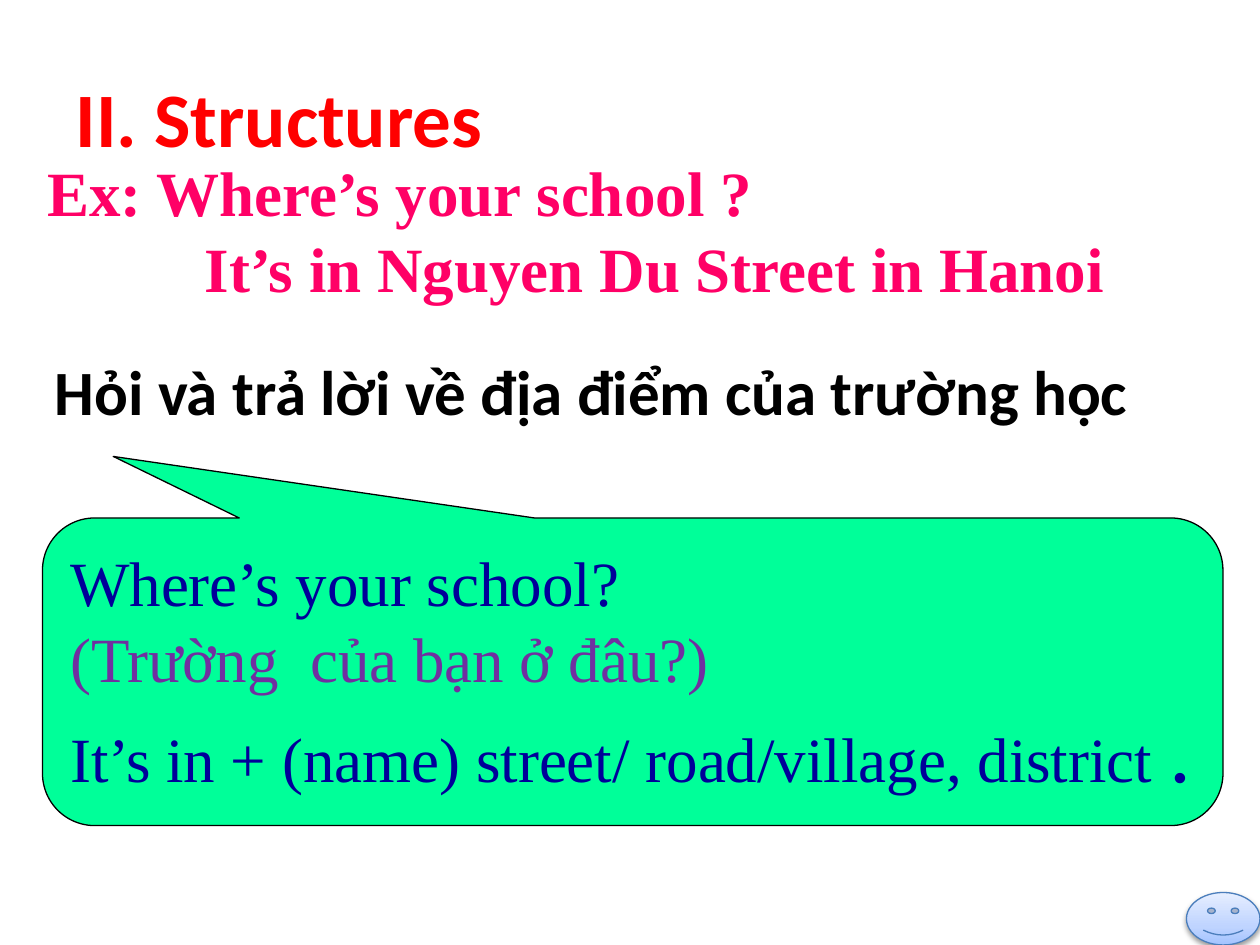
import pptx
import pptx.util
import pptx.dml.color
import pptx.enum.shapes
import pptx.enum.text
import pptx.oxml
import pptx.oxml.ns

Pt = pptx.util.Pt
RGBColor = pptx.dml.color.RGBColor
SHAPES = pptx.enum.shapes.MSO_SHAPE
LEFT = pptx.enum.text.PP_ALIGN.LEFT
MIDDLE = pptx.enum.text.MSO_ANCHOR.MIDDLE

RED = RGBColor(0xFF, 0x00, 0x00)
PINK = RGBColor(0xFF, 0x00, 0x66)
BLACK = RGBColor(0x00, 0x00, 0x00)
NAVY = RGBColor(0x00, 0x00, 0x99)
PURPLE = RGBColor(0x70, 0x30, 0xA0)
MINT = RGBColor(0x00, 0xFF, 0x99)
BLUE = RGBColor(0x4B, 0x7E, 0xBC)
SKY_STOPS = ((0, "A4C4FF"), (35, "BFD4FF"), (100, "E6EEFF"))

SANS = "Calibri"
SERIF = "Times New Roman"


def write_paragraph(para, text, font_name, color, size=36, bold=False):
    para.alignment = LEFT
    para.font.name = font_name
    para.font.size = Pt(size)
    para.font.bold = bold
    para.font.color.rgb = color
    span = para.add_run()
    span.text = text
    return span


def write_lines(frame, lines, font_name, bold=False):
    """Write one paragraph for each (text, colour) pair."""
    for number, (text, color) in enumerate(lines):
        para = frame.add_paragraph() if number else frame.paragraphs[0]
        write_paragraph(para, text, font_name, color, bold=bold)


def add_title(slide, text):
    title = slide.shapes.title
    title.left, title.top, title.width, title.height = Pt(36), Pt(21.6), Pt(648), Pt(90)
    title.text_frame.vertical_anchor = MIDDLE
    write_paragraph(title.text_frame.paragraphs[0], text, SANS, RED, 44, True)


def add_text(slide, left, top, width, height, lines, font_name):
    box = slide.shapes.add_textbox(Pt(left), Pt(top), Pt(width), Pt(height))
    box.text_frame.word_wrap = True
    write_lines(box.text_frame, lines, font_name, bold=True)
    return box.text_frame


def add_outlined_shape(slide, kind, left, top, width, height, line_color):
    shape = slide.shapes.add_shape(kind, Pt(left), Pt(top), Pt(width), Pt(height))
    shape.shadow.inherit = False
    shape.line.color.rgb = line_color
    shape.line.width = Pt(0.75)
    return shape


def add_callout(slide, lines):
    callout = add_outlined_shape(slide, SHAPES.ROUNDED_RECTANGULAR_CALLOUT,
                                 24.3, 296, 674.6, 175.8, BLACK)
    for number, value in enumerate((-0.44, -0.7, 0.17)):
        callout.adjustments[number] = value
    callout.fill.solid()
    callout.fill.fore_color.rgb = MINT
    frame = callout.text_frame
    frame.word_wrap = False
    frame.vertical_anchor = MIDDLE
    write_lines(frame, lines, SERIF)
    full_stop = frame.paragraphs[-1].add_run()
    full_stop.text = "."
    full_stop.font.size = Pt(50)


def add_smiley(slide):
    smiley = add_outlined_shape(slide, SHAPES.SMILEY_FACE, 678, 510, 42, 30, BLUE)
    smiley.fill.gradient()
    gradient = smiley.fill._xPr.find(pptx.oxml.ns.qn("a:gradFill"))
    namespace = pptx.oxml.ns.nsdecls("a")
    stops = "".join(f'<a:gs pos="{position * 1000}"><a:srgbClr val="{color}"/></a:gs>'
                    for position, color in SKY_STOPS)
    gradient.getparent().replace(gradient, pptx.oxml.parse_xml(
        f'<a:gradFill {namespace} rotWithShape="1"><a:gsLst>{stops}</a:gsLst>'
        '<a:lin ang="16200000" scaled="1"/></a:gradFill>'))
    effects = smiley._element.spPr.find(pptx.oxml.ns.qn("a:effectLst"))
    effects.append(pptx.oxml.parse_xml(
        f'<a:outerShdw {namespace} blurRad="{Pt(3.1)}" dist="{Pt(1.6)}" dir="5400000" '
        'rotWithShape="0"><a:srgbClr val="000000"><a:alpha val="38000"/></a:srgbClr>'
        '</a:outerShdw>'))


def main():
    deck = pptx.Presentation()
    deck.slide_width, deck.slide_height = Pt(720), Pt(540)
    slide = deck.slides.add_slide(deck.slide_layouts[5])
    add_title(slide, "II. Structures")
    add_text(slide, 24.3, 198, 674.6, 60,
             [("Hỏi và trả lời về địa điểm của trường học", BLACK)], SANS)
    add_callout(slide, [
        ("Where’s your school?", NAVY),
        ("(Trường  của bạn ở đâu?)", PURPLE),
        ("It’s in + (name) street/ road/village, district ", NAVY),
    ])
    example = add_text(slide, 20, 84.2, 648, 94.3, [
        ("Ex: Where’s your school ?", PINK),
        ("It’s in Nguyen Du Street in Hanoi", PINK),
    ], SERIF)
    answer = example.paragraphs[1]._p.get_or_add_pPr()
    answer.set("marL", str(Pt(90)))
    add_smiley(slide)
    deck.save("out.pptx")


if __name__ == "__main__":
    main()
